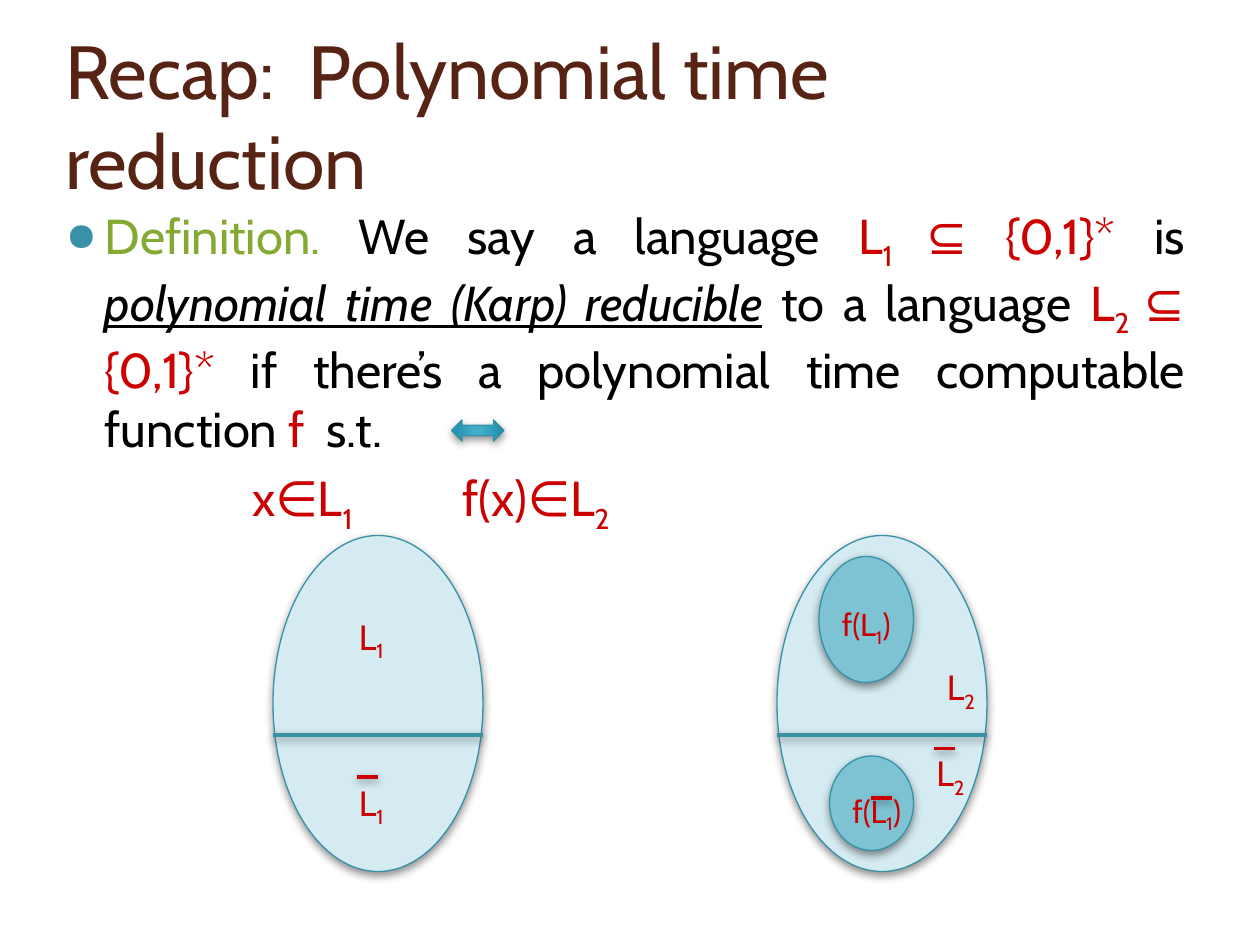
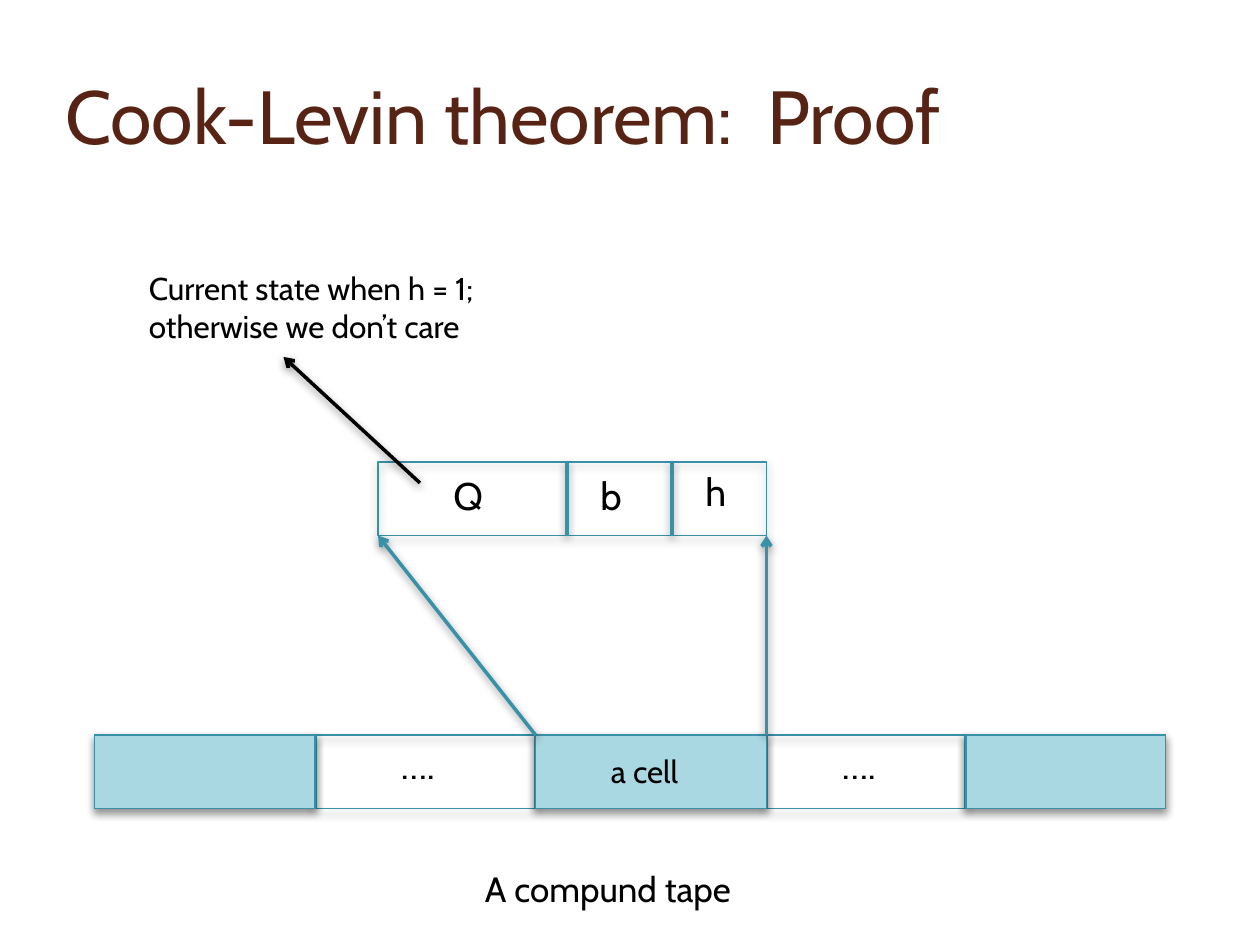
"""Builds two slides on polynomial time reduction and the Cook-Levin tape."""
import itertools

import pptx
import pptx.dml.color
import pptx.enum.shapes
import pptx.enum.text
import pptx.oxml
import pptx.oxml.ns
import pptx.util

COLS, ROWS = 120, 90
SIZE = pptx.util.Inches(10), pptx.util.Inches(7.5)
UNIT = SIZE[0] / COLS

THEME = {
    "font": "Cabin",
    "title": "572314", "text": "000000", "math": "CC0000", "term": "84AA33",
    "edge": "3891A7", "pale": "D4EBF1", "mid": "7EC3D4", "cell": "A9D7E2",
    "glow": [(0, "45ACCC"), (15, "45ACCB"), (62, "2B9AB9"), (97, "1C8AA7"), (100, "0E89A7")],
    "big": 43, "body": 28, "mark": 22, "label": 20, "small": 18,
    "thin": 0.75, "thick": 2,
}
STYLES = {
    "title": {"tone": "title"},
    "text": {"tone": "text"},
    "math": {"tone": "math"},
    "sub": {"tone": "math", "drop": True},
    "term": {"tone": "term"},
    "key": {"tone": "text", "italic": True, "underline": True},
}
FRAME = {"word_wrap": True, "auto_size": pptx.enum.text.MSO_AUTO_SIZE.NONE}
JUST = pptx.enum.text.PP_ALIGN.JUSTIFY
LEFT = pptx.enum.text.PP_ALIGN.LEFT
OVAL = pptx.enum.shapes.MSO_SHAPE.OVAL
RECT = pptx.enum.shapes.MSO_SHAPE.RECTANGLE
ARROW = pptx.enum.shapes.MSO_SHAPE.LEFT_RIGHT_ARROW

RECAP = "Recap:  Polynomial time reduction"
PROOF = "Cook-Levin theorem:  Proof"
DEFINE = [
    ("Definition.", "term"), (" We say a language ", "text"),
    ("L", "math"), ("1 ", "sub"), ("⊆ {0,1}* ", "math"), ("is ", "text"),
    ("polynomial time (Karp) reducible", "key"), (" to a language ", "text"),
    ("L", "math"), ("2 ", "sub"), ("⊆ {0,1}*", "math"),
    (" if there’s a polynomial time computable function ", "text"),
    ("f ", "math"), (" s.t.", "text"),
]
RULE = [("\tx∈L", "math"), ("1", "sub"), ("\tf(x)∈L", "math"), ("2", "sub")]
STOPS = 1.57, 3.24

SETS = {"left": [26, 74], "top": 51, "wide": 20, "high": 32, "split": 70}
IMAGES = [(78, 53, 9, 12), (79, 72, 8, 9)]
NAMES = [
    ("L", "1", "", (33, 58, 6, 5.3), "label"),
    ("L", "1", "", (33, 73.8, 6, 5.3), "label"),
    ("L", "2", "", (89, 62.8, 6, 5.3), "label"),
    ("L", "2", "", (88, 71, 6, 5.3), "label"),
    ("f(L", "1", ")", (79, 57, 9, 4.8), "small"),
    ("f(L", "1", ")", (80, 74.8, 8, 4.8), "small"),
]
BARS = [(34, 74), (89, 71.3), (83, 76)]

TAPE = {"edges": [9, 30, 51, 73, 92, 111], "top": 70, "high": 7}
FIELDS = {"edges": [36, 54, 64, 73], "top": 44, "high": 7}
FOCUS = 2
NOTES = [
    ("….", (37, 70, 14, 5.6), "mark"),
    ("….", (79, 70, 14, 5.6), "mark"),
    ("A compund tape", (45, 82, 46, 5.3), "label"),
    ("a cell", (57, 71, 13, 4.8), "small"),
    ("h", (66, 44, 4, 5.6), "mark"),
    ("b", (56, 44.4, 4, 5.6), "mark"),
    ("Q", (42, 44.4, 11, 5.6), "mark"),
    ("Current state when h = 1; otherwise we don’t care", (13, 25, 44, 8.5), "small"),
]


def grid(*vals):
    """Turns grid units into lengths."""
    return [round(val * UNIT) for val in vals]


def rgb(name):
    """Gives a theme colour."""
    return pptx.dml.color.RGBColor.from_string(THEME[name])


def put(obj, vals):
    """Sets each attribute named in a dict."""
    for key, val in vals.items():
        setattr(obj, key, val)


def node(xml):
    """Makes a drawing element."""
    space = pptx.oxml.ns.nsdecls("a")
    return pptx.oxml.parse_xml(xml.replace(">", f" {space}>", 1) if "/>" not in xml.split(">")[0] + ">"
                               else xml.replace("/>", f" {space}/>", 1))


def shade(shape):
    """Gives a shape or line its soft shadow."""
    shape._element.spPr.append(node(
        '<a:effectLst><a:outerShdw blurRad="63500" dist="25400" dir="5400000" rotWithShape="0">'
        '<a:srgbClr val="000000"><a:alpha val="43000"/></a:srgbClr></a:outerShdw></a:effectLst>'))


def write(para, runs, size):
    """Adds styled runs to a paragraph."""
    for text, name in runs:
        style = STYLES[name]
        run = para.add_run()
        run.text = text
        put(run.font, {"name": THEME["font"], "size": pptx.util.Pt(THEME[size]),
                       "italic": style.get("italic", False),
                       "underline": style.get("underline", False)})
        run.font.color.rgb = rgb(style["tone"])
        if style.get("drop"):
            run.font._element.set("baseline", "-25000")


def label(slide, runs, box, size):
    """Adds a text box and returns its frame."""
    frame = slide.shapes.add_textbox(*grid(*box)).text_frame
    put(frame, FRAME)
    write(frame.paragraphs[0], runs, size)
    return frame


def block(slide, kind, box, fill=None):
    """Adds an outlined shape, filled or hollow."""
    shape = slide.shapes.add_shape(kind, *grid(*box))
    if fill == "glow":
        shape.fill.gradient()
        grad = shape._element.spPr.find(pptx.oxml.ns.qn("a:gradFill"))
        grad.clear()
        stops = "".join(f'<a:gs pos="{pos * 1000}"><a:srgbClr val="{tone}"/></a:gs>'
                        for pos, tone in THEME[fill])
        grad.append(node(f"<a:gsLst>{stops}</a:gsLst>"))
        grad.append(node('<a:path path="circle"><a:fillToRect l="50000" t="50000" '
                         'r="50000" b="50000"/></a:path>'))
    elif fill:
        shape.fill.solid()
        shape.fill.fore_color.rgb = rgb(fill)
    else:
        shape.fill.background()
    shape.line.color.rgb = rgb("edge")
    shape.line.width = pptx.util.Pt(THEME["thin"])
    shade(shape)


def line(slide, ends, tone="edge", tip=False):
    """Adds a thick line, with an arrowhead at its end if asked."""
    link = slide.shapes.add_connector(pptx.enum.shapes.MSO_CONNECTOR.STRAIGHT, *grid(*ends))
    link.line.color.rgb = rgb(tone)
    link.line.width = pptx.util.Pt(THEME["thick"])
    if tip:
        link.line._get_or_add_ln().append(node('<a:tailEnd type="arrow"/>'))
    shade(link)


def start(deck, text, wide):
    """Adds a slide with its title."""
    slide = deck.slides.add_slide(deck.slide_layouts[5])
    title = slide.shapes.title
    put(title, dict(zip(("left", "top", "width", "height"), grid(5, 4, wide, 13.8))))
    put(title.text_frame, {**FRAME, "vertical_anchor": pptx.enum.text.MSO_ANCHOR.MIDDLE})
    para = title.text_frame.paragraphs[0]
    para.alignment = LEFT
    write(para, [(text, "title")], "big")
    return slide


def define(slide):
    """Adds the bulleted definition and its rule."""
    frame = label(slide, DEFINE, (4, 19, 110, 63), "body")
    head, rule = frame.paragraphs[0], frame.add_paragraph()
    write(rule, RULE, "body")
    for para, align in ((head, JUST), (rule, LEFT)):
        put(para, {"alignment": align, "space_before": pptx.util.Pt(6)})
    props = head._p.get_or_add_pPr()
    props.set("marL", str(pptx.util.Inches(0.4)))
    props.set("indent", str(pptx.util.Inches(-0.31)))
    for xml in (f'<a:buClr><a:srgbClr val="{THEME["edge"]}"/></a:buClr>',
                '<a:buSzPct val="80000"/>', '<a:buChar char="●"/>'):
        props.append(node(xml))
    tabs = "".join(f'<a:tab pos="{pptx.util.Inches(stop)}" algn="l"/>' for stop in STOPS)
    rule._p.get_or_add_pPr().append(node(f"<a:tabLst>{tabs}</a:tabLst>"))


def recap(deck):
    """Draws the reduction slide."""
    slide = start(deck, RECAP, 101.8)
    define(slide)
    block(slide, ARROW, (43, 40, 5, 2), "glow")
    wide, split = SETS["wide"], SETS["split"]
    for left in SETS["left"]:
        block(slide, OVAL, (left, SETS["top"], wide, SETS["high"]), "pale")
        line(slide, (left, split, left + wide, split))
    for box in IMAGES:
        block(slide, OVAL, box, "mid")
    for base, sub, end, box, size in NAMES:
        runs = [(base, "math"), (sub, "sub"), (end, "math")]
        label(slide, [run for run in runs if run[0]], box, size)
    for left, top in BARS:
        line(slide, (left, top, left + 2, top), "math")


def strip(slide, row):
    """Draws a row of cells with dividers."""
    edges, top, high = row["edges"], row["top"], row["high"]
    block(slide, RECT, (edges[0], top, edges[-1] - edges[0], high))
    for edge in edges[1:-1]:
        line(slide, (edge, top, edge, top + high))


def proof(deck):
    """Draws the compound tape slide."""
    slide = start(deck, PROOF, 110)
    strip(slide, TAPE)
    cells = list(itertools.pairwise(TAPE["edges"]))
    for left, right in cells[::2]:
        block(slide, RECT, (left, TAPE["top"], right - left, TAPE["high"]), "cell")
    strip(slide, FIELDS)
    low = FIELDS["top"] + FIELDS["high"]
    for edge, goal in zip(cells[FOCUS], (FIELDS["edges"][0], FIELDS["edges"][-1])):
        line(slide, (edge, TAPE["top"], goal, low), tip=True)
    line(slide, (40, 46, 27, 34), "text", True)
    for text, box, size in NOTES:
        label(slide, [(text, "text")], box, size)


def main():
    """Builds and saves the deck."""
    deck = pptx.Presentation()
    deck.slide_width, deck.slide_height = SIZE
    recap(deck)
    proof(deck)
    deck.save("out.pptx")


if __name__ == "__main__":
    main()
